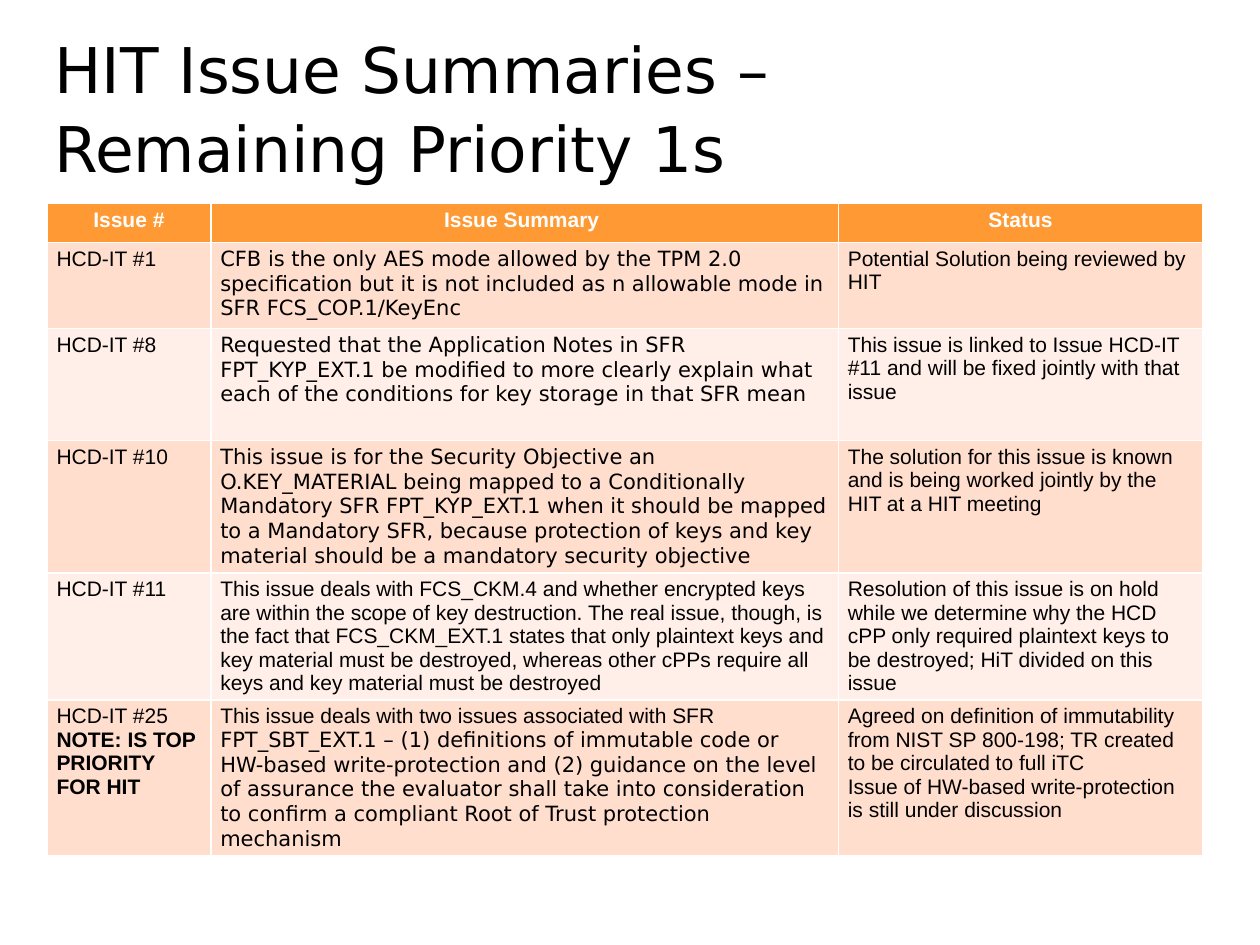
from pptx import Presentation
from pptx.dml.color import RGBColor as RGB
from pptx.enum.text import MSO_ANCHOR as Anchor, MSO_AUTO_SIZE as Auto, PP_ALIGN as Align
from pptx.util import Pt

HUES = {"head": "FF9933", "odd": "FFDECE", "even": "FFEFE8",
        "white": "FFFFFF", "black": "000000"}
SANS, WIDE = "Arial", "DejaVu Sans"


def style(run, size, face, hue, bold=False):
    font = run.font
    font.size, font.name, font.bold = Pt(size), face, bold
    font.color.rgb = RGB.from_string(HUES[hue])


deck = Presentation()
deck.slide_width, deck.slide_height = Pt(720), Pt(540)
slide = deck.slides.add_slide(deck.slide_layouts[5])

# Title
title = slide.shapes.title
title.left, title.top, title.width, title.height = Pt(23.8), Pt(50.4), Pt(864), Pt(59.8)
frame = title.text_frame
frame.text = "HIT Issue Summaries –\nRemaining Priority 1s"
frame.auto_size = Auto.NONE
frame.word_wrap = True
frame.vertical_anchor = Anchor.BOTTOM
frame.margin_left, frame.margin_right = Pt(7.2), Pt(7.2)
frame.margin_top = frame.margin_bottom = Pt(4.3)
for para in frame.paragraphs:
    para.alignment = Align.LEFT
    style(para.runs[0], 36, WIDE, "black")
frame.paragraphs[1].space_before = Pt(2)

# Table content: issue, summary as (text, font) runs, status
heads = ["Issue #", "Issue Summary ", "Status"]
issues = [
    ("HCD-IT #1",
     [("CFB is the only AES mode allowed by the TPM 2.0 specification but it is not "
       "included as n allowable mode in SFR FCS_COP.1/KeyEnc", WIDE)],
     "Potential Solution being reviewed by HIT"),
    ("HCD-IT #8",
     [("Requested that the Application Notes in SFR FPT_KYP_EXT.1 be modified to more "
       "clearly explain what each of the conditions for key storage in that SFR mean", WIDE)],
     "This issue is linked to Issue HCD-IT #11 and will be fixed jointly with that issue"),
    ("HCD-IT #10",
     [("This issue is for the Security Objective an O.KEY_MATERIAL being mapped to a "
       "Conditionally Mandatory SFR FPT_KYP_EXT.1 when it should be mapped to a Mandatory "
       "SFR, because protection of keys and key material should be a mandatory security "
       "objective", WIDE)],
     "The solution for this issue is known and is being worked jointly by the HIT at a "
     "HIT meeting"),
    ("HCD-IT #11",
     [("This issue deals with FCS_CKM.4 and whether encrypted keys are within the scope of "
       "key destruction. The real issue, though, is the fact that FCS_CKM_EXT.1 states that "
       "only plaintext keys and key material must be destroyed, whereas other cPPs require "
       "all keys and key material must be destroyed", SANS)],
     "Resolution of this issue is on hold while we determine why the HCD cPP only required "
     "plaintext keys to be destroyed; HiT divided on this issue"),
    ("HCD-IT #25\nNOTE: IS TOP PRIORITY FOR HIT",
     [("This issue deals with two issues associated with SFR ", SANS),
      ("FPT_SBT_EXT.1 – (1) definitions of immutable code or HW-based write-protection and "
       "(2) guidance on the level of assurance the evaluator shall take into consideration "
       "to confirm a compliant Root of Trust protection mechanism", WIDE)],
     "Agreed on definition of immutability from NIST SP 800-198; TR created to be "
     "circulated to full iTC\nIssue of HW-based write-protection is still under discussion"),
]

# Table grid
widths = [93.6, 358.6, 208.1]
heights = [22.3, 49] + [64.1] * 4
grid = slide.shapes.add_table(len(heights), len(widths), Pt(26.9), Pt(116.3),
                              Pt(sum(widths)), Pt(sum(heights))).table
for col, width in zip(grid.columns, widths):
    col.width = Pt(width)
for row, height in zip(grid.rows, heights):
    row.height = Pt(height)

# Cells
for r, row in enumerate([heads] + issues):
    band = "head" if r == 0 else "odd" if r % 2 else "even"
    for c, text in enumerate(row):
        cell = grid.cell(r, c)
        cell.fill.solid()
        cell.fill.fore_color.rgb = RGB.from_string(HUES[band])
        cell.margin_left = cell.margin_right = Pt(5.4)
        cell.margin_top = cell.margin_bottom = Pt(2.7)
        parts = [(text, SANS)] if isinstance(text, str) else text
        cell.text_frame.text = parts[0][0]
        for words, face in parts[1:]:
            cell.text_frame.paragraphs[0].add_run().text = words
        for para in cell.text_frame.paragraphs:
            para.alignment = Align.CENTER if r == 0 else Align.LEFT
            for run, (words, face) in zip(para.runs, parts):
                bold = r == 0 or run.text.startswith("NOTE")
                style(run, 12, face, "black" if r else "white", bold)

deck.save("out.pptx")
